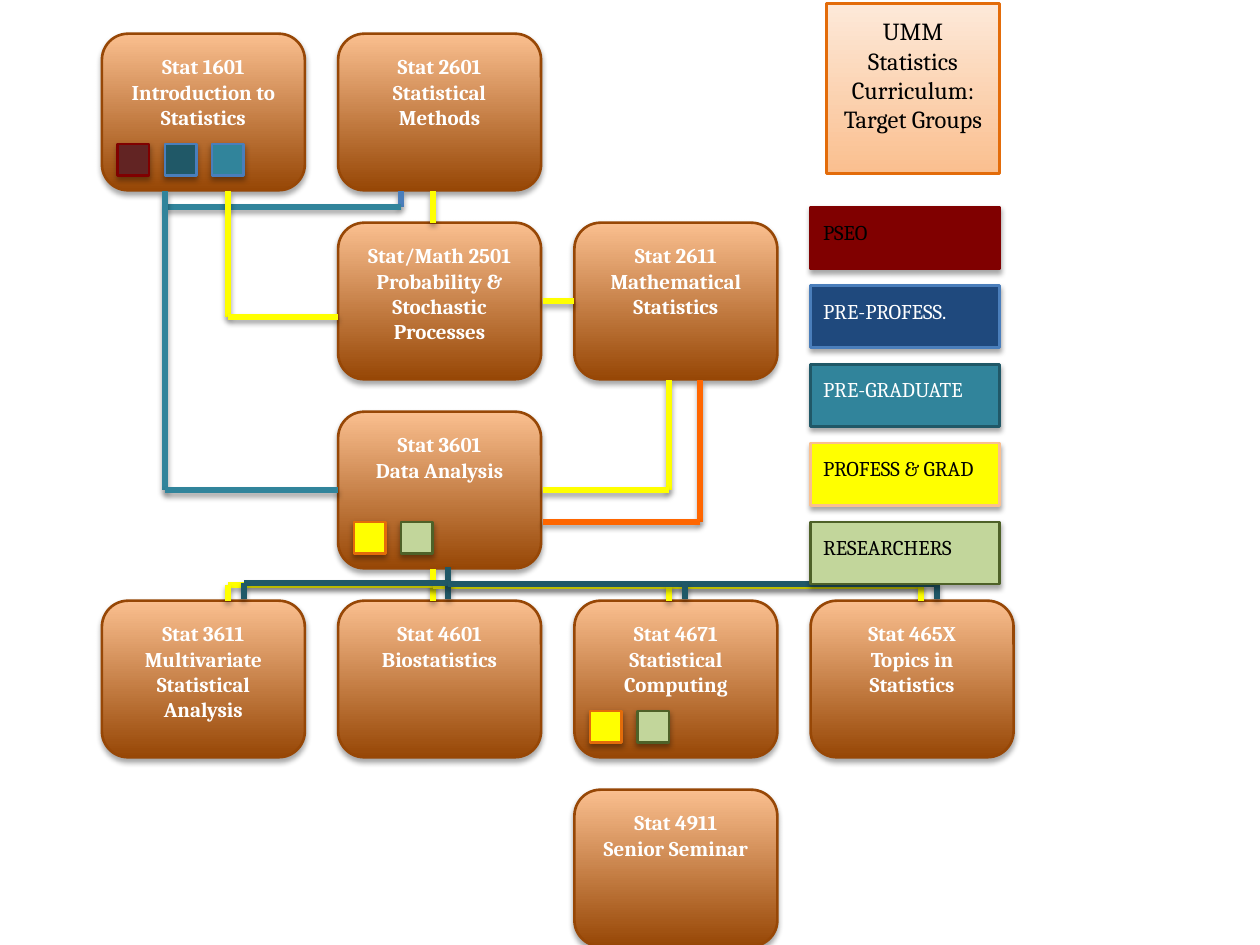
from dataclasses import dataclass

from lxml import etree
from pptx import Presentation
from pptx.dml.color import RGBColor
from pptx.enum.shapes import MSO_CONNECTOR, MSO_SHAPE
from pptx.enum.text import MSO_ANCHOR, PP_ALIGN
from pptx.oxml.ns import qn
from pptx.util import Pt

STRAIGHT = MSO_CONNECTOR.STRAIGHT
RECTANGLE = MSO_SHAPE.RECTANGLE
ROUNDED = MSO_SHAPE.ROUNDED_RECTANGLE
TOP = MSO_ANCHOR.TOP
LEFT = PP_ALIGN.LEFT
CENTER = PP_ALIGN.CENTER

FONT = "Cambria"
COLORS = {
    "black": "000000", "white": "FFFFFF", "yellow": "FFFF00",
    "peach": "FABF8F", "pale peach": "FDE9D9", "brown": "974706",
    "amber": "E36C0A", "orange": "FF6600", "maroon": "800000",
    "dark red": "622423", "navy": "1F497D", "blue": "4A7EBB",
    "teal": "31849B", "dark teal": "205867", "green": "C2D69B",
    "dark green": "4E6128",
}
COLUMN_LEFT, COLUMN_STEP = 58.25, 135
ROW_TOP, ROW_STEP = 19.25, 108
COURSE_WIDTH, COURSE_HEIGHT = 116, 89.5
KEY_TOP, KEY_STEP = 118.25, 45
SWATCH_SIZE, SWATCH_STEP = 18, 27
SWATCH_INDENT, SWATCH_DROP = 9, 63


@dataclass
class Course:
    column: int
    row: int
    code: str
    title: str
    swatches: tuple[tuple[str, str], ...] = ()


@dataclass
class Route:
    color: str
    points: tuple[tuple[float, float], ...]


@dataclass
class Key:
    label: str
    fill: str
    line: str
    text: str


RESEARCH_PAIR = (("yellow", "amber"), ("green", "dark green"))
INTRO_TRIO = (("dark red", "maroon"), ("dark teal", "blue"), ("teal", "blue"))

COURSES = [
    Course(0, 0, "Stat 1601", "Introduction to Statistics", INTRO_TRIO),
    Course(1, 0, "Stat 2601", "Statistical Methods"),
    Course(1, 1, "Stat/Math 2501", "Probability & Stochastic Processes"),
    Course(2, 1, "Stat 2611", "Mathematical Statistics"),
    Course(1, 2, "Stat 3601", "Data Analysis", RESEARCH_PAIR),
    Course(0, 3, "Stat 3611", "Multivariate Statistical Analysis"),
    Course(1, 3, "Stat 4601", "Biostatistics"),
    Course(2, 3, "Stat 4671", "Statistical Computing", RESEARCH_PAIR),
    Course(3, 3, "Stat 465X", "Topics in Statistics"),
    Course(2, 4, "Stat 4911", "Senior Seminar"),
]


def bus(color: str, trunk: float, top: float) -> list[Route]:
    middle, bottom = top + 9, top + 18
    left, *right = (trunk + offset for offset in (-117, 135, 279))
    return [
        Route(color, ((trunk, top), (trunk, bottom))),
        Route(color, ((trunk, middle), (left, middle))),
        Route(color, ((trunk, middle + 0.6), (right[-1], middle + 0.6))),
        *(Route(color, ((x, middle), (x, bottom))) for x in (*right, left)),
    ]


ROUTES = [
    Route("yellow", ((247.25, 109.25), (247.25, 127.25))),
    Route("yellow", ((310.25, 172.25), (328.25, 172.25))),
    Route("yellow", ((382.25, 217.25), (382.25, 280.25), (310.25, 280.25))),
    *bus("yellow", 247.25, 325.25),
    Route("blue", ((229.25, 109.25), (229.25, 118.25))),
    Route("teal", ((229.25, 118.25), (94.25, 118.25))),
    Route("teal", ((94.25, 109.25), (94.25, 280.25), (193.25, 280.25))),
    Route("yellow", ((130.25, 109.25), (130.25, 181.25), (193.25, 181.25))),
    *bus("dark teal", 256.25, 324.25),
    Route("orange", ((400.25, 217.25), (400.25, 298.25), (310.25, 298.25))),
]

KEYS = [
    Key("PSEO", "maroon", "maroon", "black"),
    Key("PRE-PROFESS.", "navy", "blue", "white"),
    Key("PRE-GRADUATE", "teal", "dark teal", "white"),
    Key("PROFESS & GRAD", "yellow", "peach", "black"),
    Key("RESEARCHERS", "green", "dark green", "black"),
]


def rgb(name: str) -> RGBColor:
    return RGBColor.from_string(COLORS[name])


def set_effect(item, shadow: bool) -> None:
    effects = etree.SubElement(item.element.spPr, qn("a:effectLst"))
    if shadow:
        outer = etree.SubElement(
            effects, qn("a:outerShdw"), blurRad=str(Pt(3)), dist=str(Pt(2)),
            dir="5400000", algn="t", rotWithShape="0")
        tint = etree.SubElement(outer, qn("a:srgbClr"), val=COLORS["black"])
        etree.SubElement(tint, qn("a:alpha"), val="35000")


def add_box(page, kind, left: float, top: float, width: float, height: float,
            fills: tuple[str, ...], line: str, shadow: bool = True):
    box = page.shapes.add_shape(kind, Pt(left), Pt(top), Pt(width), Pt(height))
    if len(fills) == 1:
        box.fill.solid()
        box.fill.fore_color.rgb = rgb(fills[0])
    else:
        box.fill.gradient()
        box.fill.gradient_angle = 270
        for stop, name in zip(box.fill.gradient_stops, fills):
            stop.color.rgb = rgb(name)
    box.line.color.rgb = rgb(line)
    box.line.width = Pt(1.5)
    set_effect(box, shadow)
    return box


def write_text(box, *lines: str, color: str, size: float = 12,
               bold: bool = False, align=LEFT) -> None:
    frame = box.text_frame
    frame.word_wrap = True
    frame.vertical_anchor = TOP
    frame.margin_left = frame.margin_right = Pt(7.2)
    frame.margin_top = frame.margin_bottom = Pt(7.2)
    for index, line in enumerate(lines):
        para = frame.add_paragraph() if index else frame.paragraphs[0]
        para.alignment = align
        span = para.add_run()
        span.text = line
        span.font.name = FONT
        span.font.size = Pt(size)
        span.font.bold = bold
        span.font.color.rgb = rgb(color)


def draw_course(page, course: Course) -> None:
    left = COLUMN_LEFT + course.column * COLUMN_STEP
    top = ROW_TOP + course.row * ROW_STEP
    box = add_box(page, ROUNDED, left, top, COURSE_WIDTH, COURSE_HEIGHT,
                  ("peach", "brown"), "brown")
    write_text(box, course.code, course.title,
               color="white", bold=True, align=CENTER)
    for index, (fill, line) in enumerate(course.swatches):
        add_box(page, RECTANGLE, left + SWATCH_INDENT + index * SWATCH_STEP,
                top + SWATCH_DROP, SWATCH_SIZE, SWATCH_SIZE, (fill,), line)


def draw_route(page, route: Route) -> None:
    for start, end in zip(route.points, route.points[1:]):
        segment = page.shapes.add_connector(
            STRAIGHT, *(Pt(value) for value in (*start, *end)))
        segment.line.color.rgb = rgb(route.color)
        segment.line.width = Pt(3.5)
        set_effect(segment, True)


def draw_key(page, index: int, key: Key) -> None:
    box = add_box(page, RECTANGLE, COLUMN_LEFT + 3 * COLUMN_STEP,
                  KEY_TOP + index * KEY_STEP, 108, 35.5, (key.fill,), key.line)
    write_text(box, key.label, color=key.text)


def main() -> None:
    deck = Presentation()
    deck.slide_width, deck.slide_height = Pt(720), Pt(540)
    page = deck.slides.add_slide(deck.slide_layouts[6])
    for course in COURSES:
        draw_course(page, course)
    heading = add_box(page, RECTANGLE, 472.25, 2, 99, 97.25,
                      ("pale peach", "peach"), "amber", shadow=False)
    write_text(heading, "UMM Statistics Curriculum: Target Groups",
               color="black", size=14, align=CENTER)
    for route in ROUTES:
        draw_route(page, route)
    for index, key in enumerate(KEYS):
        draw_key(page, index, key)
    deck.save("out.pptx")


if __name__ == "__main__":
    main()
